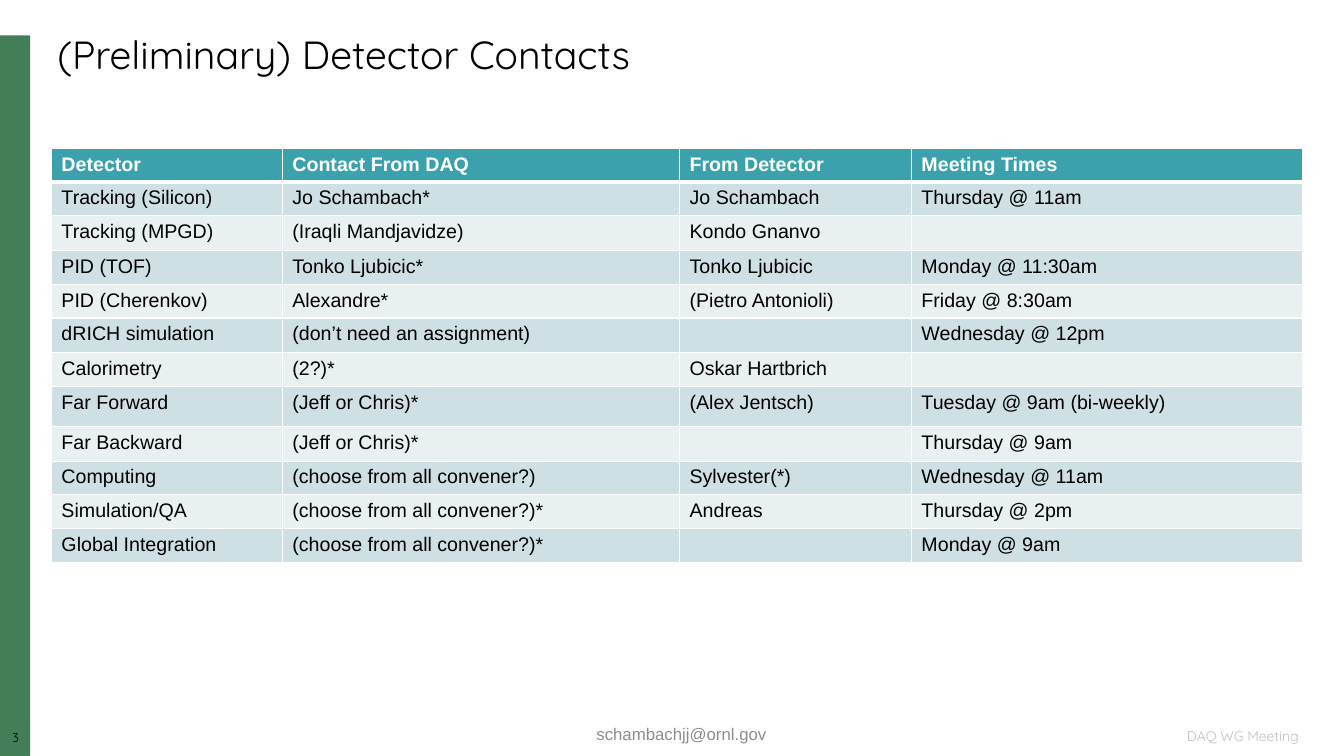
from dataclasses import dataclass
from typing import Any

from lxml.etree import SubElement as Sub
from pptx import Presentation
from pptx.dml.color import RGBColor
from pptx.enum.shapes import MSO_SHAPE as Shape
from pptx.enum.text import MSO_ANCHOR as Anchor, MSO_AUTO_SIZE as Fit, PP_ALIGN as Align
from pptx.oxml.ns import qn
from pptx.util import Emu, Pt

PX = 9144  # 100 px to the inch

BLACK = RGBColor(0x00, 0x00, 0x00)
WHITE = RGBColor(0xFF, 0xFF, 0xFF)
GREEN = RGBColor(0x44, 0x7E, 0x59)
TEAL = RGBColor(0x3B, 0xA2, 0xAD)
DARK = RGBColor(0xCE, 0xE0, 0xE3)
LIGHT = RGBColor(0xE8, 0xF0, 0xF1)
GREY = RGBColor(0x8C, 0x8C, 0x8C)
PALE = RGBColor(0xBF, 0xBF, 0xBF)


@dataclass(frozen=True)
class Box:
    left: int
    top: int
    width: int
    height: int

    def emu(self) -> tuple[Emu, ...]:
        return tuple(Emu(n * PX) for n in (self.left, self.top, self.width, self.height))


@dataclass(frozen=True)
class Style:
    font: str
    size: int
    color: RGBColor
    bold: bool = False


@dataclass(frozen=True)
class Label:
    text: str
    box: Box
    style: Style
    align: Align
    inset: bool = True


HEAD = Style("Arial", 14, WHITE, True)
BODY = Style("Arial", 14, BLACK)

LABELS = [
    Label("3", Box(0, 724, 31, 17), Style("Quicksand", 9, BLACK), Align.CENTER, False),
    Label("DAQ WG Meeting", Box(876, 720, 422, 20), Style("Quicksand", 10, PALE), Align.RIGHT),
    Label("schambachjj@ornl.gov", Box(451, 713, 450, 29), Style("Arial", 12, GREY), Align.CENTER),
]

COLS = [229, 394, 230, 388]
HEIGHTS = [32, 32, 35, 32, 32, 34, 34, 40, 34, 32, 32, 33]
ROWS = [
    ("Detector", "Contact From DAQ", "From Detector", "Meeting Times"),
    ("Tracking (Silicon)", "Jo Schambach*", "Jo Schambach", "Thursday @ 11am"),
    ("Tracking (MPGD)", "(Iraqli Mandjavidze)", "Kondo Gnanvo", ""),
    ("PID (TOF)", "Tonko Ljubicic*", "Tonko Ljubicic", "Monday @ 11:30am"),
    ("PID (Cherenkov)", "Alexandre*", "(Pietro Antonioli)", "Friday @ 8:30am"),
    ("dRICH simulation", "(don’t need an assignment)", "", "Wednesday @ 12pm"),
    ("Calorimetry", "(2?)*", "Oskar Hartbrich", ""),
    ("Far Forward", "(Jeff or Chris)*", "(Alex Jentsch)", "Tuesday @ 9am (bi-weekly)"),
    ("Far Backward", "(Jeff or Chris)*", "", "Thursday @ 9am"),
    ("Computing", "(choose from all convener?)", "Sylvester(*)", "Wednesday @ 11am"),
    ("Simulation/QA", "(choose from all convener?)*", "Andreas", "Thursday @ 2pm"),
    ("Global Integration", "(choose from all convener?)*", "", "Monday @ 9am"),
]


def write(para: Any, text: str, style: Style) -> None:
    run = para.add_run()
    run.text = text
    run.font.name = style.font
    run.font.size = Pt(style.size)
    run.font.bold = style.bold
    run.font.color.rgb = style.color


def add_title(slide: Any, text: str) -> None:
    title = slide.shapes.title
    title.left, title.top, title.width, title.height = Box(47, 30, 1249, 53).emu()
    frame = title.text_frame
    frame.auto_size = Fit.SHAPE_TO_FIT_TEXT
    frame.vertical_anchor = Anchor.TOP
    para = frame.paragraphs[0]
    para.alignment = Align.LEFT
    para.line_spacing = 0.9
    write(para, text, Style("Quicksand", 28, BLACK))


def add_bar(slide: Any) -> None:
    bar = slide.shapes.add_shape(Shape.RECTANGLE, *Box(0, 35, 30, 715).emu())
    bar.shadow.inherit = False
    bar.fill.solid()
    bar.fill.fore_color.rgb = GREEN
    bar.line.fill.background()


def add_label(slide: Any, label: Label) -> None:
    frame = slide.shapes.add_textbox(*label.box.emu()).text_frame
    frame.word_wrap = True
    if label.inset:
        frame.vertical_anchor = Anchor.MIDDLE
    else:
        frame.margin_left = frame.margin_right = 0
        frame.margin_top = frame.margin_bottom = 0
    para = frame.paragraphs[0]
    para.alignment = label.align
    write(para, label.text, label.style)


def add_edges(cell: Any, row: int) -> None:
    props = cell._tc.get_or_add_tcPr()
    for side in "LRTB":
        thick = (row, side) in ((0, "B"), (1, "T"))
        line = Sub(props, qn(f"a:ln{side}"), w=str(Pt(3 if thick else 1)))
        fill = Sub(line, qn("a:solidFill"))
        Sub(fill, qn("a:srgbClr"), val=str(WHITE))


def fill_cell(cell: Any, text: str, row: int) -> None:
    add_edges(cell, row)
    cell.fill.solid()
    cell.fill.fore_color.rgb = TEAL if row == 0 else DARK if row % 2 else LIGHT
    style = BODY if row else HEAD
    para = cell.text_frame.paragraphs[0]
    if text:
        write(para, text, style)
    else:  # an empty cell keeps the text size of its row
        Sub(para._p, qn("a:endParaRPr"), sz=str(style.size * 100))


def add_grid(slide: Any) -> None:
    box = Box(51, 147, sum(COLS), sum(HEIGHTS))
    table = slide.shapes.add_table(len(ROWS), len(COLS), *box.emu()).table
    for col, width in zip(table.columns, COLS):
        col.width = Emu(width * PX)
    for row, height in enumerate(HEIGHTS):
        table.rows[row].height = Emu(height * PX)
        for col, text in enumerate(ROWS[row]):
            fill_cell(table.cell(row, col), text, row)


def main() -> None:
    deck = Presentation()
    deck.slide_width, deck.slide_height = Emu(1333 * PX), Emu(750 * PX)
    slide = deck.slides.add_slide(deck.slide_layouts[5])

    # Side bar, then page number and footers
    add_bar(slide)
    for label in LABELS:
        add_label(slide, label)

    # Heading and contacts table
    add_title(slide, "(Preliminary) Detector Contacts")
    add_grid(slide)

    deck.save("out.pptx")


if __name__ == "__main__":
    main()
